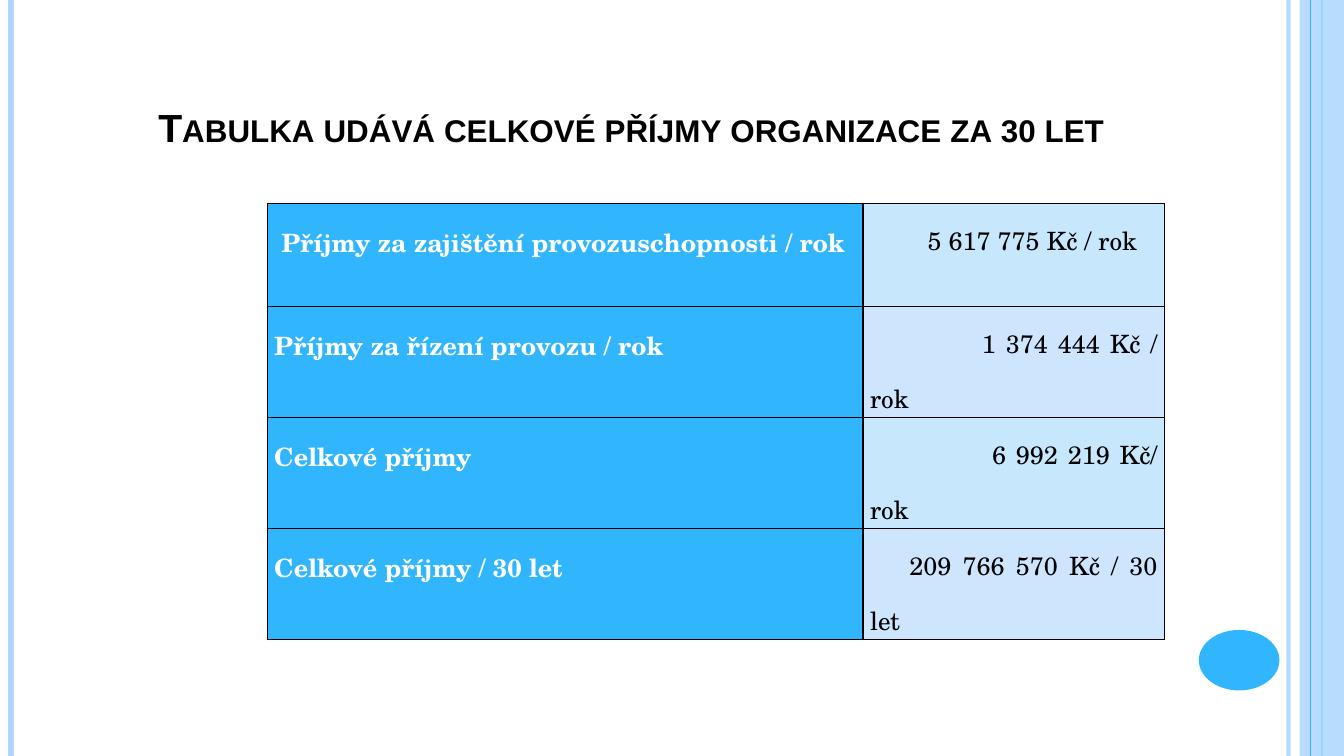
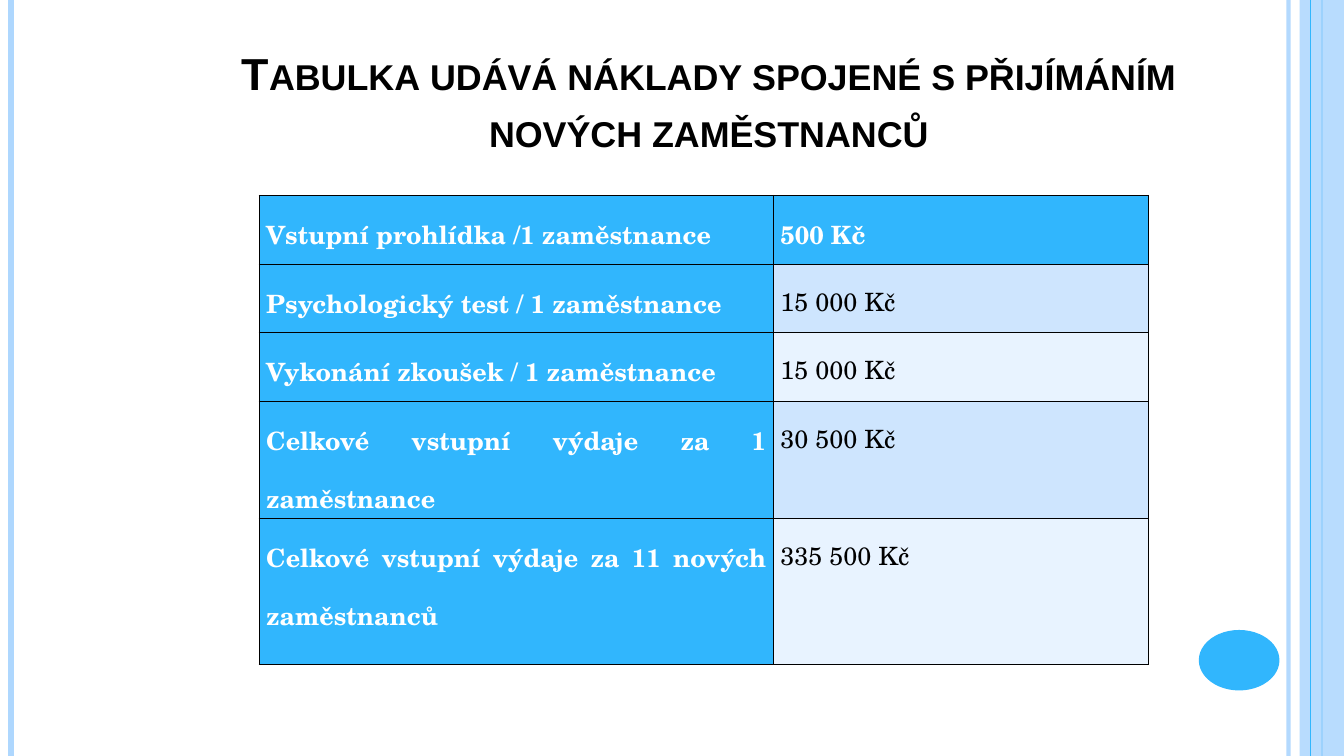
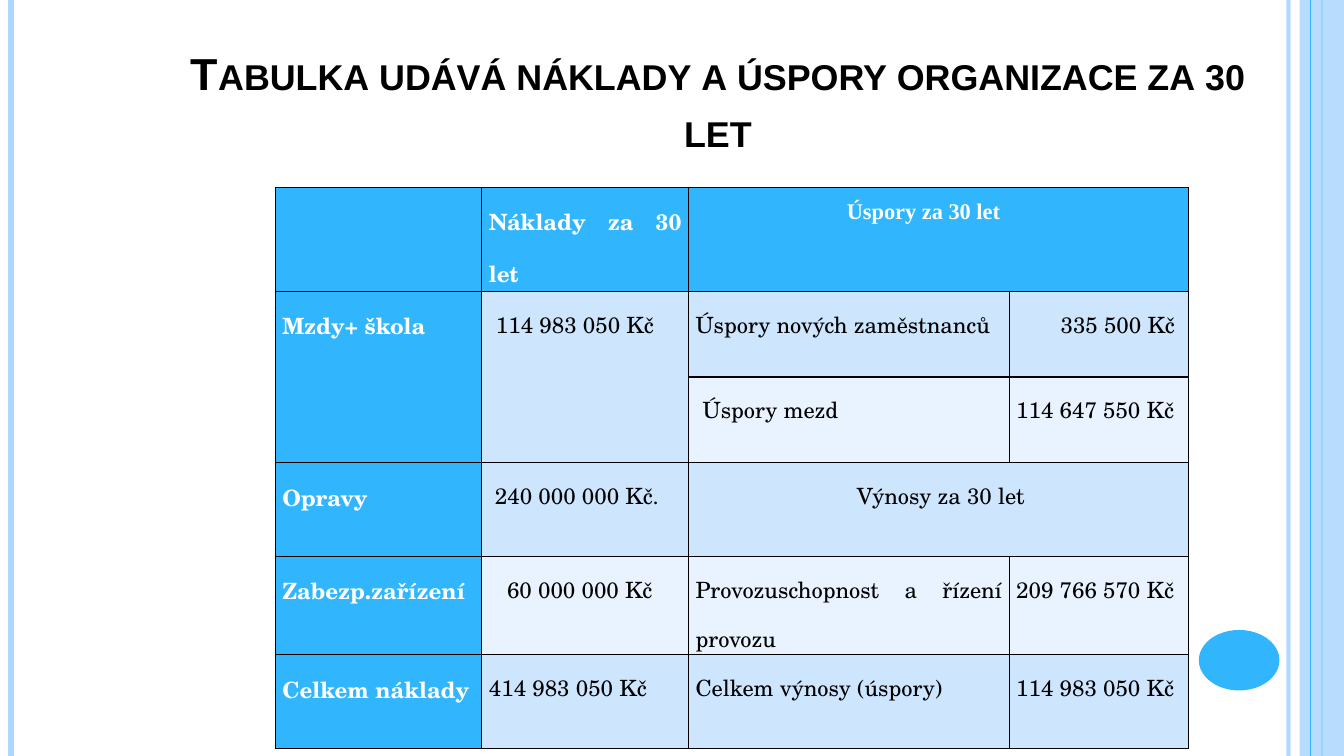
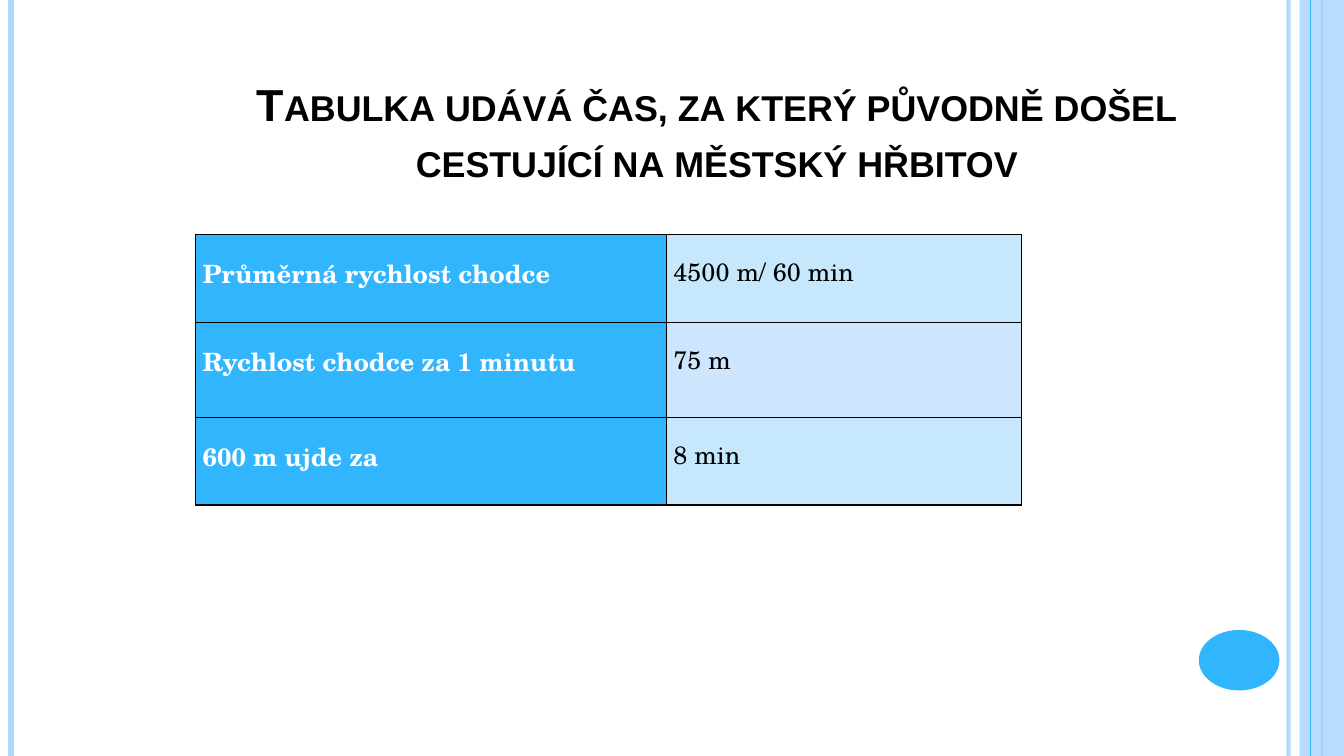
import pptx
import pptx.util
import pptx.dml.color
import pptx.enum.text
import pptx.enum.shapes
import pptx.oxml
import pptx.oxml.ns

Inches = pptx.util.Inches
Pt = pptx.util.Pt
RGBColor = pptx.dml.color.RGBColor
ALIGN = pptx.enum.text.PP_ALIGN
SHAPE = pptx.enum.shapes.MSO_SHAPE
qn = pptx.oxml.ns.qn

BLUE = RGBColor(0x31, 0xB6, 0xFD)
SOFT = RGBColor(0xAE, 0xD7, 0xFE)
SKY = RGBColor(0xC6, 0xE7, 0xFC)
MID = RGBColor(0xCE, 0xE5, 0xFE)
PALE = RGBColor(0xE8, 0xF3, 0xFF)
BLACK = RGBColor(0, 0, 0)
WHITE = RGBColor(255, 255, 255)
SERIF = "TeX Gyre Schola"
SANS = "Arial"
TIMES = "Times New Roman"
WIDTH, HEIGHT = 13.33, 7.5


def node(parent, tag, **attrs):
    child = parent.makeelement(qn(tag), attrs)
    parent.append(child)
    return child


def fade(shape, percent):
    """Make the colour of a fill or line partly transparent."""
    color = next(shape.element.spPr.iter(qn("a:srgbClr")))
    node(color, "a:alpha", val=str(percent * 1000))


def rule(slide, x, color, weight):
    line = slide.shapes.add_connector(
        pptx.enum.shapes.MSO_CONNECTOR.STRAIGHT,
        Inches(x), 0, Inches(x), Inches(HEIGHT))
    line.line.color.rgb = color
    line.line.width = Pt(weight)
    node(line.element.spPr, "a:effectLst")
    return line


def block(slide, kind, x, y, w, h, color):
    shape = slide.shapes.add_shape(
        kind, Inches(x), Inches(y), Inches(w), Inches(h))
    shape.shadow.inherit = False
    shape.fill.solid()
    shape.fill.fore_color.rgb = color
    shape.line.fill.background()
    return shape


def frame(deck, slide):
    """Draw the side bands and the dot, then hand them to the master."""
    edge = rule(slide, 12.78, SOFT, 3)
    fade(edge, 93)
    left = rule(slide, 0.11, SOFT, 4.5)
    bright = rule(slide, 13.11, BLUE, 1.5)
    band = block(slide, SHAPE.RECTANGLE, 12.89, 0, 0.44, HEIGHT, SOFT)
    fade(band, 87)
    thin = rule(slide, 13, BLUE, 0.75)
    dot = block(slide, SHAPE.OVAL, 11.89, 6.25, 0.8, 0.6, BLUE)
    tree = deck.slide_master.shapes.element
    for number, part in enumerate((edge, left, bright, band, thin, dot), 50):
        part.element.xpath("./*/p:cNvPr")[0].set("id", str(number))
        tree.append(part.element)


def inset(para, size):
    """Indent the first line."""
    props = para._p.get_or_add_pPr()
    props.set("marL", "0")
    props.set("indent", str(Inches(size)))


def head(slide, text, box, size=32, align=ALIGN.CENTER, indent=0):
    title = slide.shapes.title
    title.left, title.top, title.width, title.height = map(Inches, box)
    body = title.text_frame
    body.text = text
    body.word_wrap = True
    body.auto_size = pptx.enum.text.MSO_AUTO_SIZE.NONE
    body.vertical_anchor = pptx.enum.text.MSO_ANCHOR.BOTTOM
    body.margin_left = body.margin_right = Inches(0.12)
    body.margin_top = body.margin_bottom = Inches(0.06)
    para = body.paragraphs[0]
    para.alignment = align
    para.line_spacing = 1.05
    inset(para, indent)
    run = para.runs[0]
    run.font.name = SANS
    run.font.size = Pt(size)
    run.font.bold = True
    run.font.color.rgb = BLACK
    run.font._element.set("cap", "small")


def border(cell):
    props = cell._tc.get_or_add_tcPr()
    for spot, side in enumerate("LRTB"):
        line = node(props, "a:ln" + side, w=str(Pt(1)))
        node(node(line, "a:solidFill"), "a:srgbClr", val=str(BLACK))
        props.insert(spot, line)


def write(cell, entry, size, strong):
    """Fill a cell with text, or with a text and its indent."""
    text, indent = entry if isinstance(entry, tuple) else (entry, 0)
    cell.margin_left = cell.margin_right = Inches(0.07)
    cell.margin_top = cell.margin_bottom = 0
    if not text:
        return
    cell.text_frame.text = text
    para = cell.text_frame.paragraphs[0]
    para.alignment = ALIGN.JUSTIFY
    para.line_spacing = 1.5
    inset(para, indent)
    font = para.runs[0].font
    font.name = SERIF
    font.size = Pt(size)
    font.bold = strong
    font.color.rgb = WHITE if strong else BLACK


def grid(slide, spot, cols, rows, data, size=18, top=False):
    """Add a table with a blue first column and, if top, a blue first row."""
    x, y = spot
    table = slide.shapes.add_table(
        len(rows), len(cols), Inches(x), Inches(y),
        Inches(sum(cols)), Inches(sum(rows))).table
    table.first_row = top
    table.first_col = True
    table.horz_banding = False
    for col, width in zip(table.columns, cols):
        col.width = Inches(width)
    for row, height in zip(table.rows, rows):
        row.height = Inches(height)
    even = PALE if top else SKY
    for r, line in enumerate(data):
        for c, entry in enumerate(line):
            cell = table.cell(r, c)
            strong = c == 0 or (top and r == 0)
            write(cell, entry, size, strong)
            cell.fill.solid()
            cell.fill.fore_color.rgb = (
                BLUE if strong else MID if r % 2 else even)
            border(cell)
    return table


def income(slide):
    head(slide, "Tabulka udává celkové příjmy organizace za 30 let",
         (0.67, 0.3, 10.89, 1.25), 28, ALIGN.LEFT, 0.78)
    grid(slide, (2.65, 2.02), (5.91, 2.99), (1.02, 1.1, 1.1, 1.1), [
        (("Příjmy za zajištění provozuschopnosti / rok", 0.07),
         ("5 617 775 Kč / rok", 0.57)),
        ("Příjmy za řízení provozu / rok", ("1 374 444 Kč / rok", 1.11)),
        ("Celkové příjmy", ("6 992 219 Kč/ rok", 1.21)),
        ("Celkové příjmy / 30 let", ("209 766 570 Kč / 30 let", 0.39)),
    ])


def hiring(slide):
    head(slide,
         "Tabulka udává náklady spojené s přijímáním nových zaměstnanců",
         (1.55, 0.84, 10.96, 0.77))
    grid(slide, (2.57, 1.94), (5.1, 3.72), (0.68, 0.68, 0.68, 1.16, 1.45), [
        ("Vstupní prohlídka /1 zaměstnance", "500 Kč"),
        ("Psychologický test / 1 zaměstnance", "15 000 Kč"),
        ("Vykonání zkoušek / 1 zaměstnance", "15 000 Kč"),
        ("Celkové vstupní výdaje za 1 zaměstnance", "30 500 Kč"),
        ("Celkové vstupní výdaje za 11 nových zaměstnanců", "335 500 Kč"),
    ], top=True)


def saving(slide):
    head(slide, "Tabulka udává náklady a úspory organizace za 30 let",
         (1.64, 0.84, 10.96, 0.77))
    table = grid(
        slide, (2.73, 1.86), (2.05, 2.05, 3.18, 1.78),
        (1.03, 0.85, 0.85, 0.93, 0.97, 0.93), [
            ("", "Náklady za 30 let", ("Úspory za 30 let", 1.5), ""),
            ("Mzdy+ škola", ("114 983 050 Kč", 0.07),
             "Úspory nových zaměstnanců", ("335 500 Kč", 0.44)),
            ("", "", ("Úspory mezd", 0.07), "114 647 550 Kč"),
            ("Opravy", ("240 000 000 Kč.", 0.06),
             ("Výnosy za 30 let", 1.6), ""),
            ("Zabezp.zařízení", ("60 000 000 Kč", 0.18),
             "Provozuschopnost a řízení provozu", "209 766 570 Kč "),
            ("Celkem náklady", "414 983 050 Kč",
             "Celkem výnosy (úspory)", "114 983 050 Kč"),
        ], 16, True)
    for r in (0, 3):
        table.cell(r, 2).merge(table.cell(r, 3))
    for c in (0, 1):
        table.cell(1, c).merge(table.cell(2, c))
    table.cell(0, 2).text_frame.paragraphs[0].runs[0].font.name = TIMES


def walk(slide):
    head(slide, "Tabulka udává čas, za který původně došel cestující "
         "na městský hřbitov", (1.63, 0.76, 10.96, 1.15))
    grid(slide, (1.94, 2.33), (4.67, 3.52), (0.87, 0.94, 0.87), [
        ("Průměrná rychlost chodce", "4500 m/ 60 min"),
        ("Rychlost chodce za 1 minutu", "75 m"),
        ("600 m ujde za", "8 min"),
    ])


def main():
    deck = pptx.Presentation()
    deck.slide_width = Inches(WIDTH)
    deck.slide_height = Inches(HEIGHT)
    for fill in (income, hiring, saving, walk):
        slide = deck.slides.add_slide(deck.slide_layouts[5])
        if fill is income:
            frame(deck, slide)
        fill(slide)
    deck.save("out.pptx")


if __name__ == "__main__":
    main()
